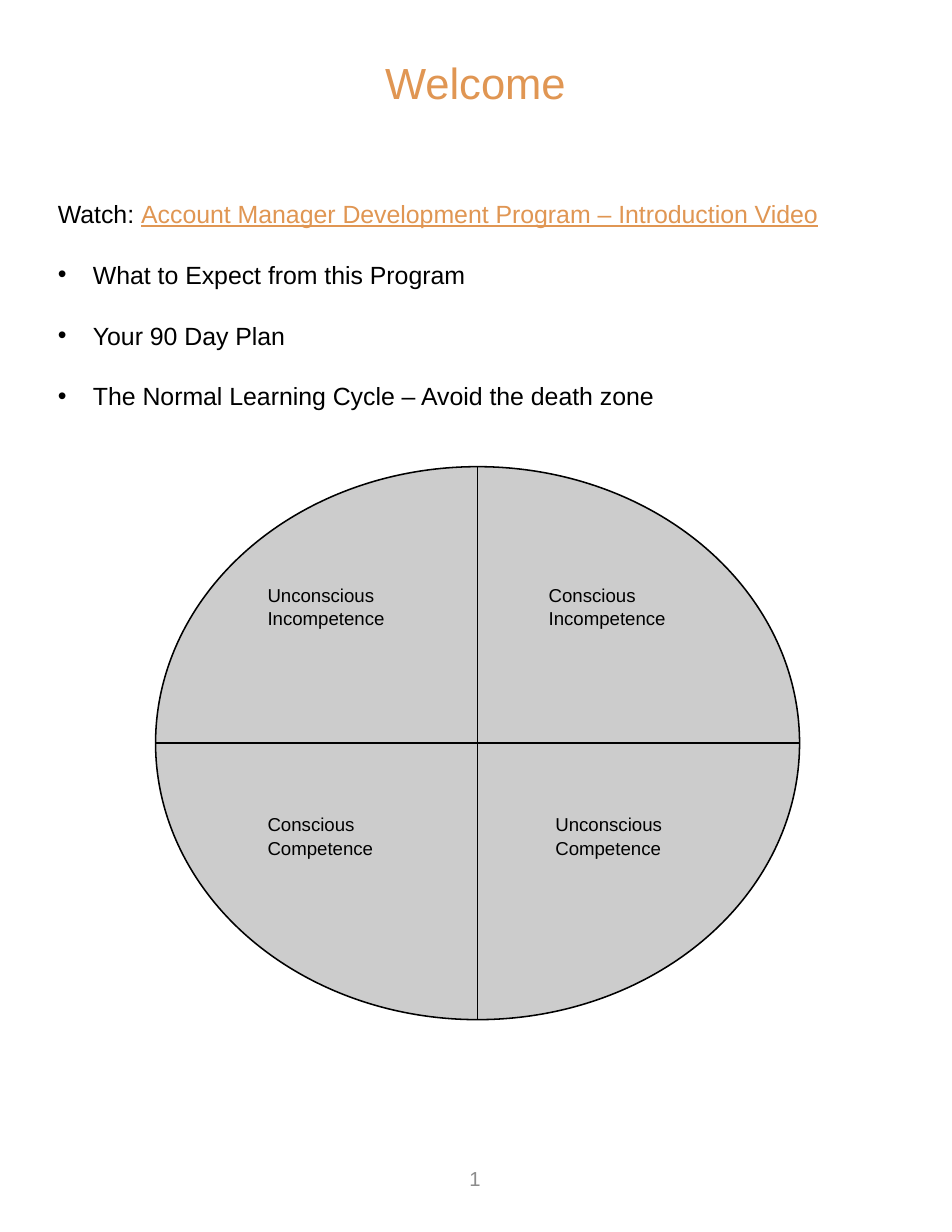
"""Build the Welcome slide with its agenda and learning-cycle diagram."""
from lxml import etree
from pptx import Presentation
from pptx.dml.color import RGBColor
from pptx.enum.shapes import MSO_CONNECTOR, MSO_SHAPE
from pptx.enum.text import MSO_ANCHOR, PP_ALIGN
from pptx.oxml.ns import qn
from pptx.util import Pt

COLORS = {"accent": "E09653", "ink": "000000", "disc": "CCCCCC", "number": "8C8C8C"}
WATCH = [("Watch: ", "ink", False),
         ("Account Manager Development Program – Introduction Video", "accent", True)]
TOPICS = ["What to Expect from this Program", "Your 90 Day Plan",
          "The Normal Learning Cycle – Avoid the death zone"]
STAGES = [("Unconscious", "Incompetence", 164.9, 370.8),
          ("Conscious", "Incompetence", 345.6, 370.8),
          ("Conscious", "Competence", 164.9, 518.4),
          ("Unconscious", "Competence", 349.9, 518.4)]
DISC = (100, 300, 414, 355.5)
CENTERED = {"alignment": PP_ALIGN.CENTER}
SPACED = {"line_spacing": 1.05}
AGENDA_GAP = {**SPACED, "space_before": Pt(19)}


def color(name):
    return RGBColor.from_string(COLORS[name])


def apply(target, values):
    for key, value in values.items():
        setattr(target, key, value)


def add_frame(slide, box, **values):
    frame = slide.shapes.add_textbox(*map(Pt, box)).text_frame
    apply(frame, {"word_wrap": True, **values})
    return frame


def write(paragraph, runs, size, layout):
    apply(paragraph, layout)
    for text, ink, underline in runs:
        run = paragraph.add_run()
        run.text = text
        apply(run.font, {"name": "Arial", "size": Pt(size), "underline": underline})
        run.font.color.rgb = color(ink)


def add_bullet(paragraph):
    properties = paragraph._p.get_or_add_pPr()
    properties.set("marL", str(Pt(22.5)))
    properties.set("indent", str(Pt(-22.5)))
    etree.SubElement(properties, qn("a:buFont")).set("typeface", "Arial")
    etree.SubElement(properties, qn("a:buChar")).set("char", "•")


def add_divider(slide, *ends):
    divider = slide.shapes.add_connector(MSO_CONNECTOR.STRAIGHT, *map(Pt, ends))
    divider.line.color.rgb = color("ink")
    divider.line.width = Pt(1)
    etree.SubElement(divider._element.spPr, qn("a:effectLst"))


def add_cycle(slide):
    left, top, width, height = DISC
    disc = slide.shapes.add_shape(MSO_SHAPE.OVAL, *map(Pt, DISC))
    disc.shadow.inherit = False
    disc.fill.solid()
    disc.fill.fore_color.rgb = color("disc")
    disc.line.color.rgb = color("ink")
    disc.line.width = Pt(1)
    middle_x, middle_y = left + width / 2, top + height / 2
    add_divider(slide, middle_x, top, middle_x, top + height)
    add_divider(slide, left, middle_y, left + width, middle_y)
    for awareness, skill, x, y in STAGES:
        frame = add_frame(slide, (x, y, 112, 36))
        write(frame.paragraphs[0], [(awareness, "ink", False)], 12, SPACED)
        write(frame.add_paragraph(), [(skill, "ink", False)], 12, SPACED)


def add_agenda(slide):
    frame = add_frame(slide, (30.2, 123.1, 520, 186.5))
    write(frame.paragraphs[0], WATCH, 16, SPACED)
    for topic in TOPICS:
        paragraph = frame.add_paragraph()
        add_bullet(paragraph)
        write(paragraph, [(topic, "ink", False)], 16, AGENDA_GAP)


def main():
    deck = Presentation()
    apply(deck, {"slide_width": Pt(612), "slide_height": Pt(792)})
    slide = deck.slides.add_slide(deck.slide_layouts[6])
    add_cycle(slide)
    title = add_frame(slide, (30.2, 27.4, 550.8, 50.4), vertical_anchor=MSO_ANCHOR.MIDDLE)
    write(title.paragraphs[0], [("Welcome", "accent", False)], 28, CENTERED)
    number = add_frame(slide, (234, 736.6, 142.6, 42.5), vertical_anchor=MSO_ANCHOR.MIDDLE)
    write(number.paragraphs[0], [("1", "number", False)], 13, CENTERED)
    add_agenda(slide)
    deck.save("out.pptx")


if __name__ == "__main__":
    main()
